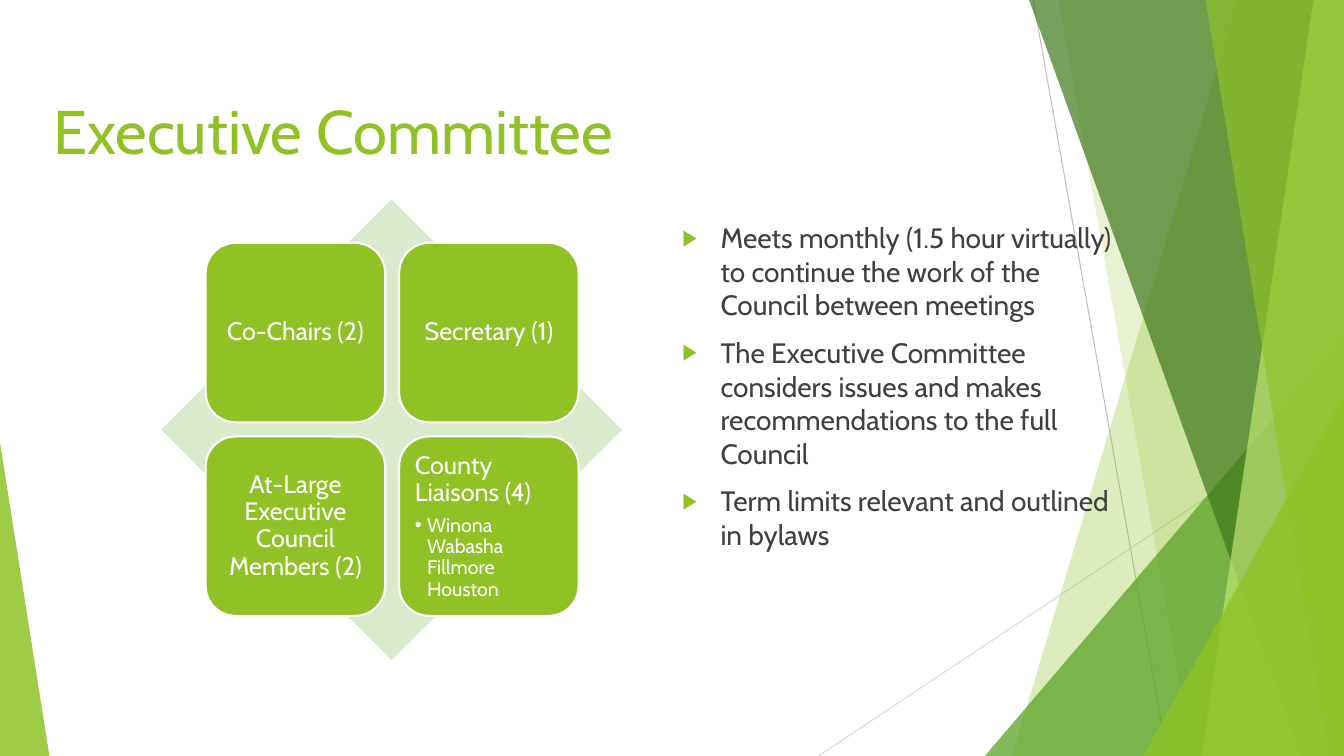
from lxml import etree
from pptx import Presentation
from pptx.dml.color import RGBColor
from pptx.enum.shapes import MSO_CONNECTOR, MSO_SHAPE
from pptx.enum.text import MSO_ANCHOR, PP_ALIGN
from pptx.oxml.ns import qn
from pptx.util import Emu, Inches, Pt

LINE = MSO_CONNECTOR.STRAIGHT
PEAK = MSO_SHAPE.ISOSCELES_TRIANGLE
GEM = MSO_SHAPE.DIAMOND
ROUND = MSO_SHAPE.ROUNDED_RECTANGLE
TOP, MID = MSO_ANCHOR.TOP, MSO_ANCHOR.MIDDLE
LEFT, MIDDLE = PP_ALIGN.LEFT, PP_ALIGN.CENTER

# Grid of cells a tenth of an inch wide and high
CELL = Inches(0.1)
COLS, ROWS = 133.33, 75
FONT = "Cabin"
LIME, WHITE, GREY = "90C226", "FFFFFF", "404040"


def grid(*cells):
    return [Emu(round(n * CELL)) for n in cells]


def tint(text):
    return RGBColor.from_string(text)


def sub(node, tag, **attrs):
    return etree.SubElement(node, qn(tag), attrs)


def paint(shape, color, alpha=100, edge=None):
    shape.shadow.inherit = False
    shape.fill.solid()
    shape.fill.fore_color.rgb = tint(color)
    if alpha < 100:
        node = shape.fill._xPr.find(".//" + qn("a:srgbClr"))
        sub(node, "a:alpha", val=str(alpha * 1000))
    if edge:
        shape.line.color.rgb = tint(edge)
        shape.line.width = Pt(1.5)
    else:
        shape.line.fill.background()


def rule(slide, ends, color):
    line = slide.shapes.add_connector(LINE, *grid(*ends))
    line.line.color.rgb = tint(color)
    line.line.width = Pt(0.75)
    sub(line._element.spPr, "a:effectLst")


def facet(slide, top, base, color, alpha):
    """Panel that runs from a slanted left side to the right slide edge."""
    pen = slide.shapes.build_freeform(*grid(top, 0))
    pen.add_line_segments([grid(COLS, 0), grid(COLS, ROWS), grid(base, ROWS)])
    paint(pen.convert_to_shape(), color, alpha)


def wedge(slide, left, top, width, tip, color, alpha):
    """Right triangle that stands on the bottom slide edge."""
    shape = slide.shapes.add_shape(PEAK, *grid(left, top, width, ROWS - top))
    shape.adjustments[0] = tip
    paint(shape, color, alpha)


def mark(para, sign, indent, color=None, scale=None):
    props = para._p.get_or_add_pPr()
    step = Inches(indent)
    props.set("marL", str(step))
    props.set("indent", str(-step))
    if color:
        sub(sub(props, "a:buClr"), "a:srgbClr", val=color)
    if scale:
        sub(props, "a:buSzPct", val=str(scale * 1000))
    sub(props, "a:buFont", typeface="Arial")
    sub(props, "a:buChar", char=sign)


def write(frame, text, size=18, color=WHITE, align=LEFT, before=0, after=0,
          space=None, bullet=None):
    """Fill the first paragraph, or add one below it."""
    first = not frame.text
    para = frame.paragraphs[0] if first else frame.add_paragraph()
    para.alignment = align
    para.line_spacing = space
    para.space_before = Pt(0 if first else before)
    para.space_after = Pt(after)
    if bullet:
        mark(para, **bullet)
    run = para.add_run()
    run.text = text
    run.font.name = FONT
    run.font.size = Pt(size)
    run.font.color.rgb = tint(color)


def box(slide, *cells):
    frame = slide.shapes.add_textbox(*grid(*cells)).text_frame
    frame.word_wrap = True
    return frame


def tile(slide, col, row, anchor=MID):
    side, pitch = 17.8, 19.2
    spot = grid(20.4 + col * pitch, 24.1 + row * pitch, side, side)
    shape = slide.shapes.add_shape(ROUND, *spot)
    paint(shape, LIME, edge=WHITE)
    frame = shape.text_frame
    frame.word_wrap = True
    frame.vertical_anchor = anchor
    frame.margin_left = frame.margin_right = Inches(0.07)
    frame.margin_top = frame.margin_bottom = Inches(0.07)
    return frame


def backdrop(slide):
    rule(slide, (102.5, 0, 115.8, ROWS), "BFBFBF")
    rule(slide, (COLS, 40.3, 81.2, ROWS), "D9D9D9")
    facet(slide, 122.8, 100.4, LIME, 30)
    facet(slide, 105, 118.3, LIME, 20)
    wedge(slide, 97.7, 33.3, COLS - 97.7, 1, "54A021", 72)
    facet(slide, 102.1, 129.1, "3F7819", 70)
    facet(slide, 130.3, 119.2, "C0E474", 70)
    facet(slide, 119.6, 131.8, LIME, 65)
    wedge(slide, 113.4, 39.3, COLS - 113.4, 1, LIME, 80)
    wedge(slide, 0, 43.9, 4.9, 0, LIME, 85)


def matrix(slide):
    gem = slide.shapes.add_shape(GEM, *grid(16, 19.8, 45.7, 45.7))
    paint(gem, "DBE9CD")
    roles = ["Co-Chairs (2)", "Secretary (1)",
             "At-Large Executive Council Members (2)"]
    for n, role in enumerate(roles):
        write(tile(slide, n % 2, n // 2), role, align=MIDDLE, space=0.9)
    # County tile with its list
    frame = tile(slide, 1, 1, TOP)
    write(frame, "County Liaisons (4)", space=0.9, after=6.3)
    write(frame, "Winona Wabasha Fillmore Houston", size=14, space=0.9,
          after=2.1, bullet={"sign": "•", "indent": 0.12})


def notes(slide):
    frame = box(slide, 66.7, 21.4, 45.8, 42.4)
    arrow = {"sign": "▶", "indent": 0.38, "color": LIME, "scale": 80}
    for text in (
        "Meets monthly (1.5 hour virtually) to continue the work of the "
        "Council between meetings",
        "The Executive Committee considers issues and makes "
        "recommendations to the full Council",
        "Term limits relevant and outlined in bylaws",
    ):
        write(frame, text, size=20, color=GREY, before=10, bullet=arrow)


def main():
    deck = Presentation()
    deck.slide_width, deck.slide_height = grid(COLS, ROWS)
    slide = deck.slides.add_slide(deck.slide_layouts[6])
    backdrop(slide)
    write(box(slide, 4.3, 8.7, 94, 14.4), "Executive Committee",
          size=44, color=LIME)
    notes(slide)
    matrix(slide)
    deck.save("out.pptx")


if __name__ == "__main__":
    main()
